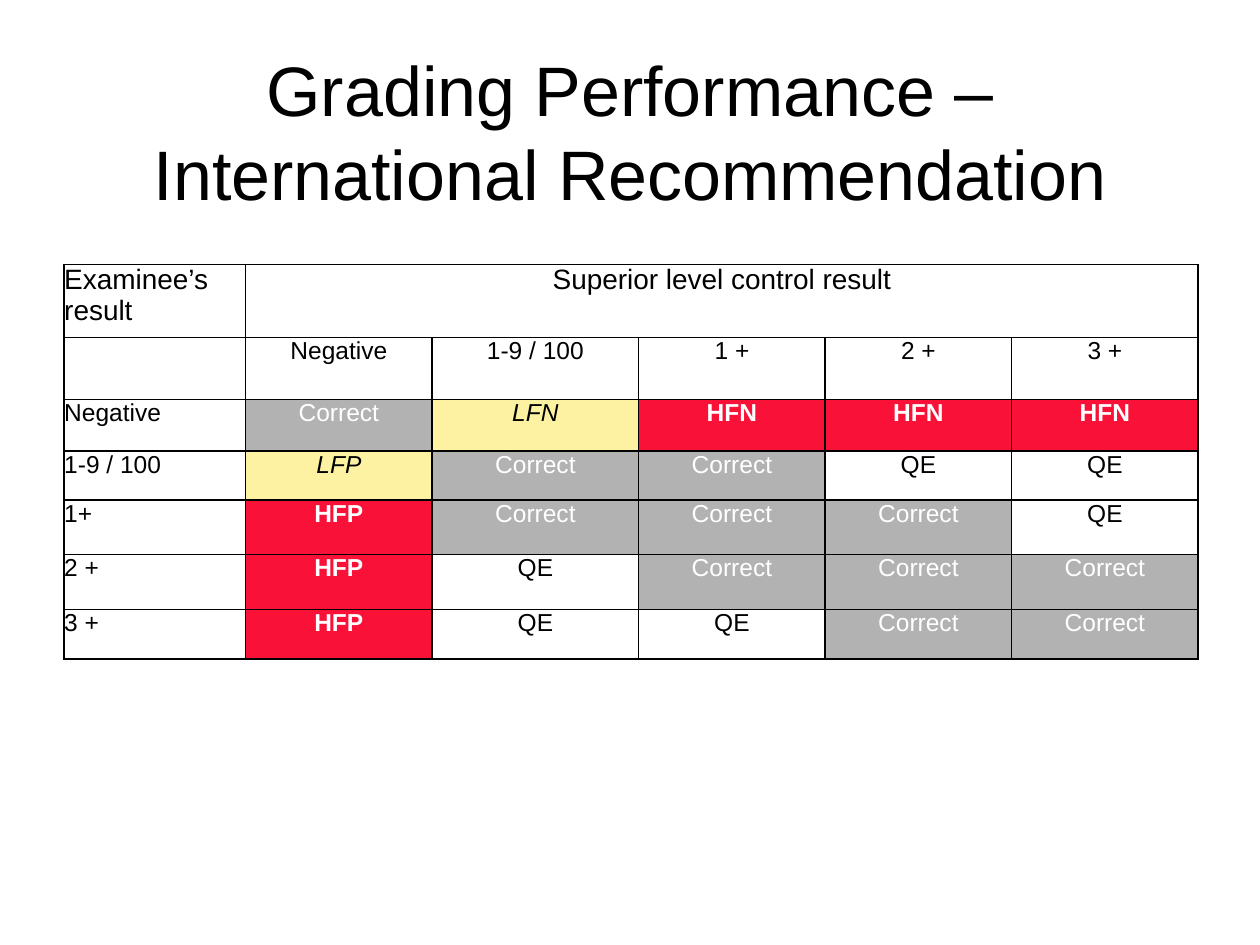
from dataclasses import dataclass

from lxml.etree import SubElement
from pptx import Presentation
from pptx.dml.color import RGBColor
from pptx.enum.text import MSO_ANCHOR, PP_ALIGN
from pptx.oxml.ns import qn
from pptx.util import Pt


@dataclass(frozen=True)
class Theme:
    font: str = "Arial"
    black: str = "000000"
    white: str = "FFFFFF"
    grey: str = "B2B2B2"
    cream: str = "FDF2A1"
    red: str = "F91138"
    title: int = 40
    head: int = 16
    body: int = 14
    rule: int = 1


THEME = Theme()

# Fill and text format for each grade
GOOD = {"fill": THEME.grey, "color": THEME.white}
LOW = {"fill": THEME.cream, "italic": True}
HIGH = {"fill": THEME.red, "color": THEME.white, "bold": True}
GRADES = {"Correct": GOOD, "LFN": LOW, "LFP": LOW, "HFN": HIGH, "HFP": HIGH}

COLS = [103.68, 106.56, 118.08, 106.56, 106.56, 106.56]
ROWS = [41.76, 35.28, 29.52, 28.08, 30.96, 31.68, 28.08]
DATA = [
    ["Examinee’s\nresult", "Superior level control result", "", "", "", ""],
    ["", "Negative", "1-9 / 100", "1 +", "2 +", "3 +"],
    ["Negative", "Correct", "LFN", "HFN", "HFN", "HFN"],
    ["1-9 / 100", "LFP", "Correct", "Correct", "QE", "QE"],
    ["1+", "HFP", "Correct", "Correct", "Correct", "QE"],
    ["2 +", "HFP", "QE", "Correct", "Correct", "Correct"],
    ["3 +", "HFP", "QE", "QE", "Correct", "Correct"],
]
HANG = 27.36
TABS = [14.4, 99.36]


def write(frame, text, size, color=THEME.black, bold=False, italic=False,
          align=PP_ALIGN.LEFT, lead=None, hang=0, tabs=()):
    """Fill a text frame, one paragraph for each line of text."""
    frame.text = text
    for para in frame.paragraphs:
        para.alignment = align
        if lead:
            para.line_spacing = Pt(lead)
        props = para._p.get_or_add_pPr()
        if hang:
            props.set("marL", str(Pt(hang)))
            props.set("indent", str(-Pt(hang)))
        if tabs:
            stops = SubElement(props, qn("a:tabLst"))
            for pos in tabs:
                SubElement(stops, qn("a:tab"), pos=str(Pt(pos)), algn="l")
        for font in [para.font] + [run.font for run in para.runs]:
            font.name = THEME.font
            font.size = Pt(size)
            font.bold = bold
            font.italic = italic
            font.color.rgb = RGBColor.from_string(color)


def border(cell):
    """Rule all four sides of a cell."""
    props = cell._tc.get_or_add_tcPr()
    for side in ("lnL", "lnR", "lnT", "lnB"):
        line = SubElement(props, qn(f"a:{side}"), w=str(Pt(THEME.rule)))
        fill = SubElement(line, qn("a:solidFill"))
        SubElement(fill, qn("a:srgbClr"), val=THEME.black)


def add_title(slide, left, top, width, height):
    title = slide.shapes.title
    title.left, title.top = Pt(left), Pt(top)
    title.width, title.height = Pt(width), Pt(height)
    frame = title.text_frame
    frame.word_wrap = True
    frame.vertical_anchor = MSO_ANCHOR.TOP
    frame.margin_top = Pt(5)
    write(frame, "Grading Performance – International Recommendation",
          THEME.title, align=PP_ALIGN.CENTER, lead=48)


def add_grid(slide, left, top):
    shape = slide.shapes.add_table(len(ROWS), len(COLS), Pt(left), Pt(top),
                                   Pt(sum(COLS)), Pt(sum(ROWS)))
    table = shape.table
    table.first_row = table.horz_banding = False
    for col, width in zip(table.columns, COLS):
        col.width = Pt(width)
    for row, height in zip(table.rows, ROWS):
        row.height = Pt(height)

    # The top heading spans all control results
    table.cell(0, 1).merge(table.cell(0, len(COLS) - 1))

    for r, line in enumerate(DATA):
        for c, text in enumerate(line):
            cell = table.cell(r, c)
            cell.margin_left = cell.margin_right = Pt(0)
            cell.margin_top = cell.margin_bottom = Pt(0)
            border(cell)
            style = dict(GRADES.get(text, {}))
            fill = style.pop("fill", None)
            if fill:
                cell.fill.solid()
                cell.fill.fore_color.rgb = RGBColor.from_string(fill)
            else:
                cell.fill.background()
            write(cell.text_frame, text, THEME.body if r else THEME.head,
                  align=PP_ALIGN.CENTER if c else PP_ALIGN.LEFT,
                  hang=HANG, tabs=TABS, **style)


def main():
    deck = Presentation()
    deck.slide_width, deck.slide_height = Pt(720), Pt(540)
    slide = deck.slides.add_slide(deck.slide_layouts[5])
    add_title(slide, 36, 21.6, 648, 90)
    add_grid(slide, 36.72, 151.2)
    deck.save("out.pptx")


if __name__ == "__main__":
    main()
